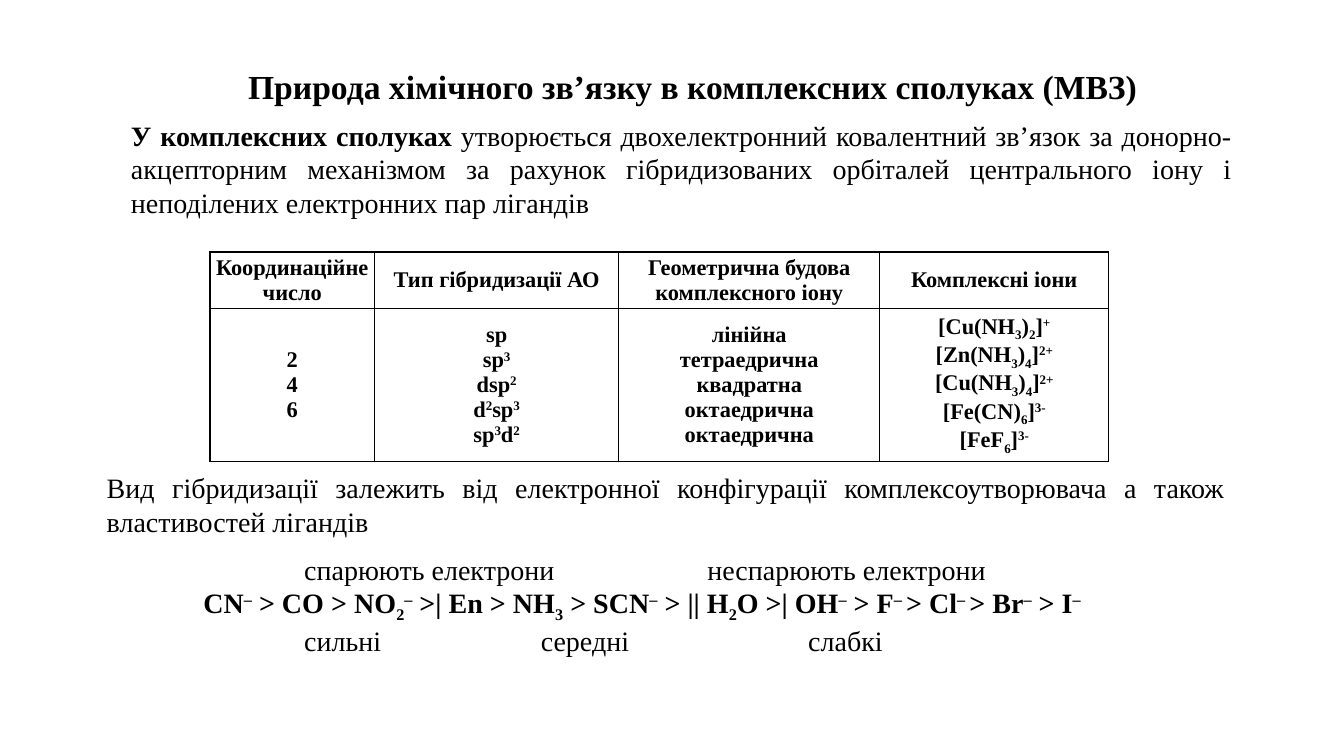
from pptx import Presentation
from pptx.util import Pt
from pptx.dml.color import RGBColor
from pptx.enum.text import PP_ALIGN, MSO_ANCHOR
from pptx.oxml import parse_xml
from pptx.oxml.ns import nsdecls

COLORS = {"ink": "000000", "page": "FFFFFF"}
BASE = {"^": "30000", "_": "-25000"}

deck = Presentation()
deck.slide_width, deck.slide_height = Pt(960), Pt(540)
slide = deck.slides.add_slide(deck.slide_layouts[6])
slide.background.fill.solid()
slide.background.fill.fore_color.rgb = RGBColor.from_string(COLORS["page"])


def write(frame, lines, size, align, bold=False, tabs=()):
    frame.word_wrap = True
    for i, line in enumerate(lines):
        para = frame.paragraphs[0] if i == 0 else frame.add_paragraph()
        para.alignment = align
        if tabs:
            stops = "".join(f'<a:tab pos="{Pt(x)}" algn="l"/>' for x in tabs[i])
            para._p.get_or_add_pPr().append(
                parse_xml(f'<a:tabLst {nsdecls("a")}>{stops}</a:tabLst>'))
        para.font.name = "Times New Roman"
        para.font.size = Pt(size)
        para.font.bold = bold
        para.font.color.rgb = RGBColor.from_string(COLORS["ink"])
        for part in line.split("~"):
            run = para.add_run()
            run.text = part.lstrip("^_")
            if part[0] in BASE:
                run.font._element.set("baseline", BASE[part[0]])


def add_box(left, top, width, height, anchor=MSO_ANCHOR.MIDDLE):
    frame = slide.shapes.add_textbox(Pt(left), Pt(top), Pt(width), Pt(height)).text_frame
    frame.vertical_anchor = anchor
    return frame


title = add_box(156, 36, 683.5, 50.4)
write(title, ["Природа хімічного зв’язку в комплексних сполуках (МВЗ) "],
      24, PP_ALIGN.CENTER, True)

intro = add_box(86.4, 84.5, 800.6, 72)
write(intro, ["У комплексних сполуках ~утворюється двохелектронний ковалентний "
              "зв’язок за донорно-акцепторним механізмом за рахунок гібридизованих "
              "орбіталей центрального іону і неподілених електронних пар лігандів "],
      20, PP_ALIGN.JUSTIFY)
intro.paragraphs[0].runs[0].font.bold = True

rows = [
    [["Координаційне число"], ["Тип гібридизації АО"],
     ["Геометрична будова комплексного іону"], ["Комплексні іони"]],
    [["2", "4", "6"],
     ["sp", "sp~^3", "dsp~^2", "d~^2~sp~^3", "sp~^3~d~^2"],
     ["лінійна", "тетраедрична", "квадратна", "октаедрична", "октаедрична"],
     ["[Cu(NH~_3~)~_2~]~^+", "[Zn(NH~_3~)~_4~]~^2+", "[Cu(NH~_3~)~_4~]~^2+",
      "[Fe(CN)~_6~]~^3-", "[FeF~_6~]~^3-"]],
]
table = slide.shapes.add_table(2, 4, Pt(150), Pt(180), Pt(642), Pt(131)).table
for col, width in zip(table.columns, (117.5, 174.5, 186.5, 163.5)):
    col.width = Pt(width)
for row, height, texts in zip(table.rows, (40.5, 90.5), rows):
    row.height = Pt(height)
    for cell, lines in zip(row.cells, texts):
        cell.margin_left = cell.margin_right = cell.margin_top = cell.margin_bottom = 0
        cell.vertical_anchor = MSO_ANCHOR.MIDDLE
        cell.fill.background()
        write(cell.text_frame, lines, 16, PP_ALIGN.CENTER, True)
        for i, side in enumerate("LRTB"):
            cell._tc.get_or_add_tcPr().insert(i, parse_xml(
                f'<a:ln{side} {nsdecls("a")} w="{Pt(1)}"><a:solidFill>'
                f'<a:srgbClr val="{COLORS["ink"]}"/></a:solidFill></a:ln{side}>'))

note = add_box(69.1, 332.6, 812.9, 50.4, MSO_ANCHOR.TOP)
write(note, ["Вид гібридизації залежить від електронної конфігурації "
             "комплексоутворювача а також властивостей лігандів"],
      20, PP_ALIGN.JUSTIFY)

series = add_box(138.2, 396, 678.2, 72)
write(series, [
    "\tспарюють електрони\tнеспарюють електрони",
    "СN~^–~ > СО > NО~_2~^–~ >| Еn > NН~_3~ > SСN~^–~ > || Н~_2~О >| ОН~^–"
    "~ > F~^– ~> Сl~^– ~> Вr~^–~ > І~^–",
    "\tсильні\tсередні\tслабкі",
], 20, PP_ALIGN.LEFT, tabs=[(72, 360), (72,), (72, 241, 432)])
for run in series.paragraphs[1].runs:
    run.font.bold = True

deck.save("out.pptx")
